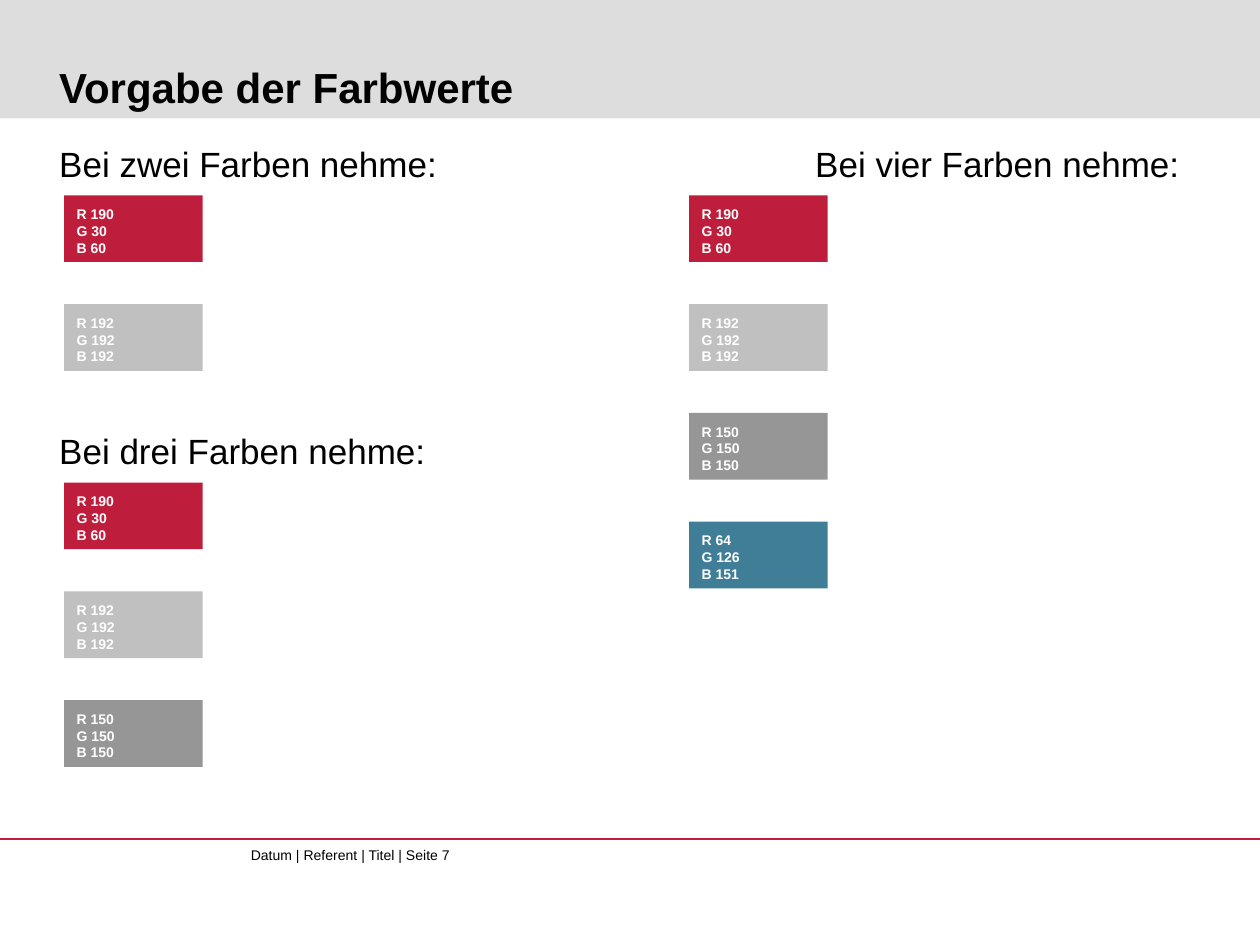
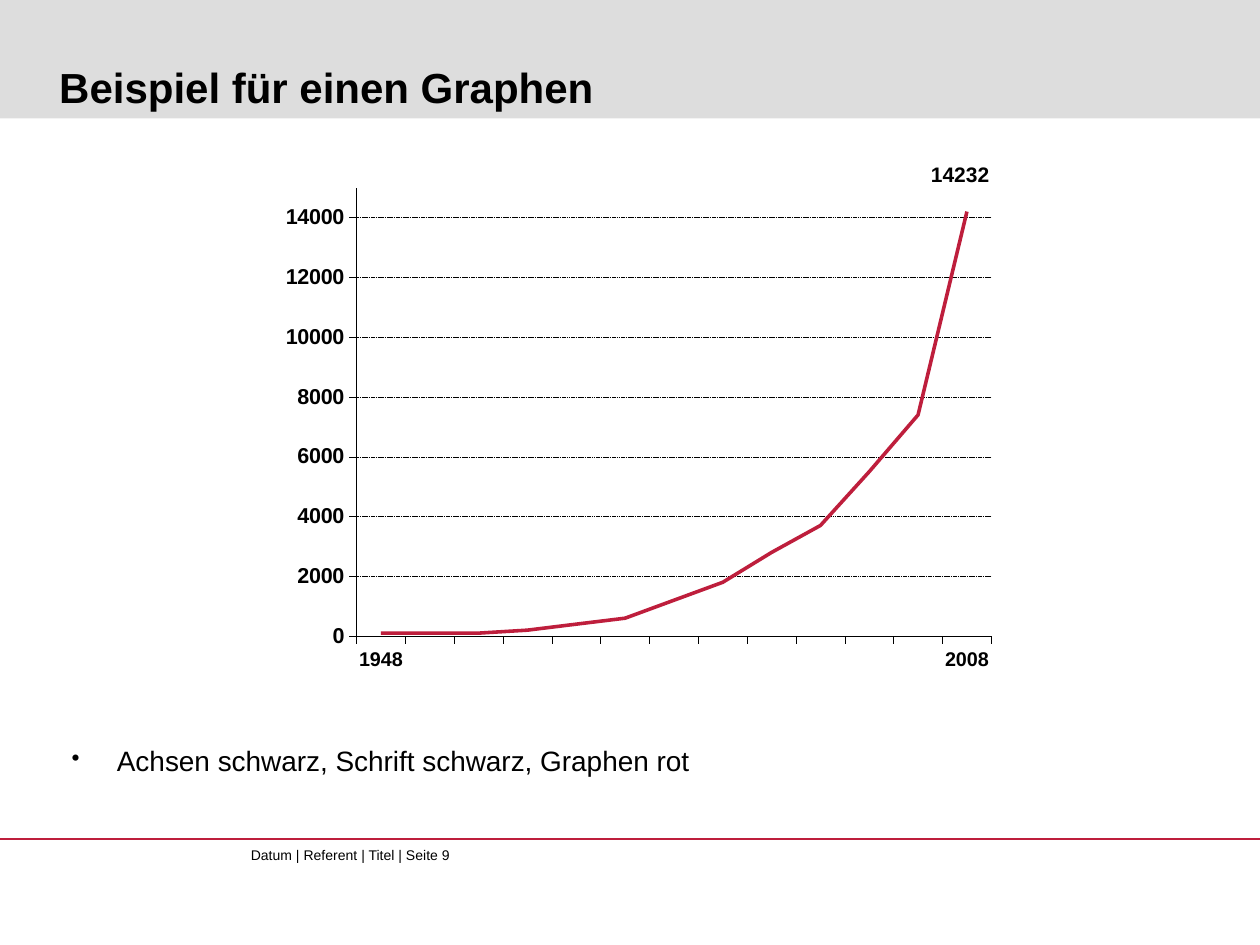
from dataclasses import dataclass

from lxml import etree
from pptx import Presentation
from pptx.chart.data import CategoryChartData
from pptx.dml.color import RGBColor
from pptx.enum import chart as chart_enum, dml, shapes, text
from pptx.oxml import parse_xml
from pptx.oxml.ns import nsdecls, qn
from pptx.util import Inches, Pt


@dataclass(frozen=True)
class Theme:
    font: str = "Arial"
    black: RGBColor = RGBColor(0, 0, 0)
    white: RGBColor = RGBColor(255, 255, 255)
    band: RGBColor = RGBColor(221, 221, 221)
    red: RGBColor = RGBColor(190, 30, 60)
    light_gray: RGBColor = RGBColor(192, 192, 192)
    dark_gray: RGBColor = RGBColor(150, 150, 150)
    blue: RGBColor = RGBColor(64, 126, 151)
    title_size: float = 24
    heading_size: float = 20
    body_size: float = 16
    peak_size: float = 12
    value_size: float = 12.3
    category_size: float = 11.3
    small_size: float = 8


THEME = Theme()
PALETTE = (THEME.red, THEME.light_gray, THEME.dark_gray, THEME.blue)


def style_font(font, size, color=THEME.black, bold=False):
    font.name = THEME.font
    font.size = Pt(size)
    font.bold = bold
    font.color.rgb = color


def add_text(slide, box, content, size, bold=False, inset=0.0,
             anchor=text.MSO_ANCHOR.TOP, wrap=True):
    shape = slide.shapes.add_textbox(*map(Inches, box))
    frame = shape.text_frame
    frame.word_wrap = wrap
    frame.vertical_anchor = anchor
    frame.margin_left = frame.margin_right = Inches(inset)
    frame.margin_top = frame.margin_bottom = Inches(inset / 2)
    frame.text = content
    paragraph = frame.paragraphs[0]
    for run in paragraph.runs:
        style_font(run.font, size, bold=bold)
    return paragraph


def add_rectangle(slide, box, color):
    shape = slide.shapes.add_shape(shapes.MSO_SHAPE.RECTANGLE, *map(Inches, box))
    shape.shadow.inherit = False
    shape.fill.solid()
    shape.fill.fore_color.rgb = color
    shape.line.fill.background()
    return shape


def add_base_slide(presentation, title, page):
    slide = presentation.slides.add_slide(presentation.slide_layouts[6])
    add_rectangle(slide, (0, 0, 10, 0.94), THEME.band)
    rule = slide.shapes.add_connector(
        shapes.MSO_CONNECTOR.STRAIGHT, 0, Inches(6.66), Inches(10), Inches(6.66))
    rule.line.color.rgb = THEME.red
    rule.line.width = Pt(0.75)
    etree.SubElement(rule._element.spPr, qn("a:effectLst"))
    add_text(slide, (1.99, 6.72, 5.45, 0.23),
             f"Datum | Referent | Titel | Seite {page}", THEME.small_size)
    add_text(slide, (0.47, 0.12, 9.16, 0.77), title, THEME.title_size,
             bold=True, anchor=text.MSO_ANCHOR.BOTTOM)
    return slide


def add_swatch(slide, box, color):
    frame = add_rectangle(slide, box, color).text_frame
    frame.word_wrap = True
    frame.vertical_anchor = text.MSO_ANCHOR.BOTTOM
    frame.text = "\n".join(f"{name} {value}" for name, value in zip("RGB", color))
    for paragraph in frame.paragraphs:
        paragraph.alignment = text.PP_ALIGN.LEFT
        for run in paragraph.runs:
            style_font(run.font, THEME.small_size, THEME.white, bold=True)


def add_color_group(slide, left, top, heading, heading_left, colors):
    add_text(slide, (heading_left, top - 0.42, 3.3, 0.35), heading, THEME.heading_size)
    for index, color in enumerate(colors):
        add_swatch(slide, (left, top + index * 2.59 / 3, 1.1, 0.53), color)


def build_color_slide(presentation):
    slide = add_base_slide(presentation, "Vorgabe der Farbwerte", 7)
    for left, top, number, heading_left, count in (
        (0.51, 1.55, "zwei", 0.47, 2),
        (0.51, 3.83, "drei", 0.47, 3),
        (5.47, 1.55, "vier", 6.47, 4),
    ):
        add_color_group(slide, left, top, f"Bei {number} Farben nehme:",
                        heading_left, PALETTE[:count])


def set_plot_area(chart, left, top, width, height):
    layout = parse_xml(f"<c:layout {nsdecls('c')}><c:manualLayout/></c:layout>")
    settings = {"layoutTarget": "inner", "xMode": "edge", "yMode": "edge",
                "x": left, "y": top, "w": width, "h": height}
    for name, value in settings.items():
        etree.SubElement(layout[0], qn(f"c:{name}")).set("val", str(value))
    plot_area = chart._chartSpace.chart.plotArea
    for existing in plot_area.findall(qn("c:layout")):
        plot_area.remove(existing)
    plot_area.insert(0, layout)


def style_axis(axis, size):
    axis.major_tick_mark = chart_enum.XL_TICK_MARK.OUTSIDE
    axis.minor_tick_mark = chart_enum.XL_TICK_MARK.NONE
    axis.format.line.color.rgb = THEME.black
    axis.format.line.width = Pt(0.25)
    style_font(axis.tick_labels.font, size, bold=True)


def add_growth_chart(slide, box):
    left, top, width, height = box
    data = CategoryChartData(number_format="0")
    data.categories = ["1948"] + [""] * 11 + ["2008"]
    data.add_series("Series 1", (100, 100, 100, 200, 400, 600, 1200, 1800,
                                 2800, 3700, 5500, 7400, 14200))
    chart = slide.shapes.add_chart(
        chart_enum.XL_CHART_TYPE.LINE, *map(Inches, box), data).chart
    chart.has_title = False
    chart.has_legend = False
    style_font(chart.font, THEME.category_size)
    set_plot_area(chart, 0.78 / width, 0.28 / height, 5.04 / width, 3.56 / height)

    style_axis(chart.category_axis, THEME.category_size)
    value_axis = chart.value_axis
    style_axis(value_axis, THEME.value_size)
    value_axis.minimum_scale = 0
    value_axis.maximum_scale = 15000
    value_axis.major_unit = 2000
    value_axis.tick_labels.number_format = "0"
    value_axis.tick_labels.number_format_is_linked = False
    grid = value_axis.major_gridlines.format.line
    grid.color.rgb = THEME.black
    grid.width = Pt(0.25)
    grid.dash_style = dml.MSO_LINE.SQUARE_DOT

    chart.plots[0].vary_by_categories = False
    series = chart.plots[0].series[0]
    series.smooth = False
    series.marker.style = chart_enum.XL_MARKER_STYLE.NONE
    series.format.line.color.rgb = THEME.red
    series.format.line.width = Pt(2.05)

    peak = add_text(slide, (left + 5.14, top + 0.07, 0.86, 0.22), "14232",
                    THEME.peak_size, bold=True)
    peak.alignment = text.PP_ALIGN.CENTER


def add_bullet(slide, box, content):
    paragraph = add_text(slide, box, content, THEME.body_size, inset=0.1)
    paragraph.line_spacing = 1.5
    properties = paragraph._p.get_or_add_pPr()
    properties.set("marL", str(Inches(0.36)))
    properties.set("indent", str(-Inches(0.36)))
    etree.SubElement(properties, qn("a:buSzPct")).set("val", "85000")
    etree.SubElement(properties, qn("a:buChar")).set("char", "•")


def build_chart_slide(presentation):
    slide = add_base_slide(presentation, "Beispiel für einen Graphen", 9)
    add_growth_chart(slide, (2.05, 1.21, 5.82, 4.24))
    add_bullet(slide, (0.47, 5.72, 6.46, 0.45),
               "Achsen schwarz, Schrift schwarz, Graphen rot")


def main():
    presentation = Presentation()
    presentation.slide_width = Inches(10)
    presentation.slide_height = Inches(7.5)
    build_color_slide(presentation)
    build_chart_slide(presentation)
    presentation.save("out.pptx")


if __name__ == "__main__":
    main()
